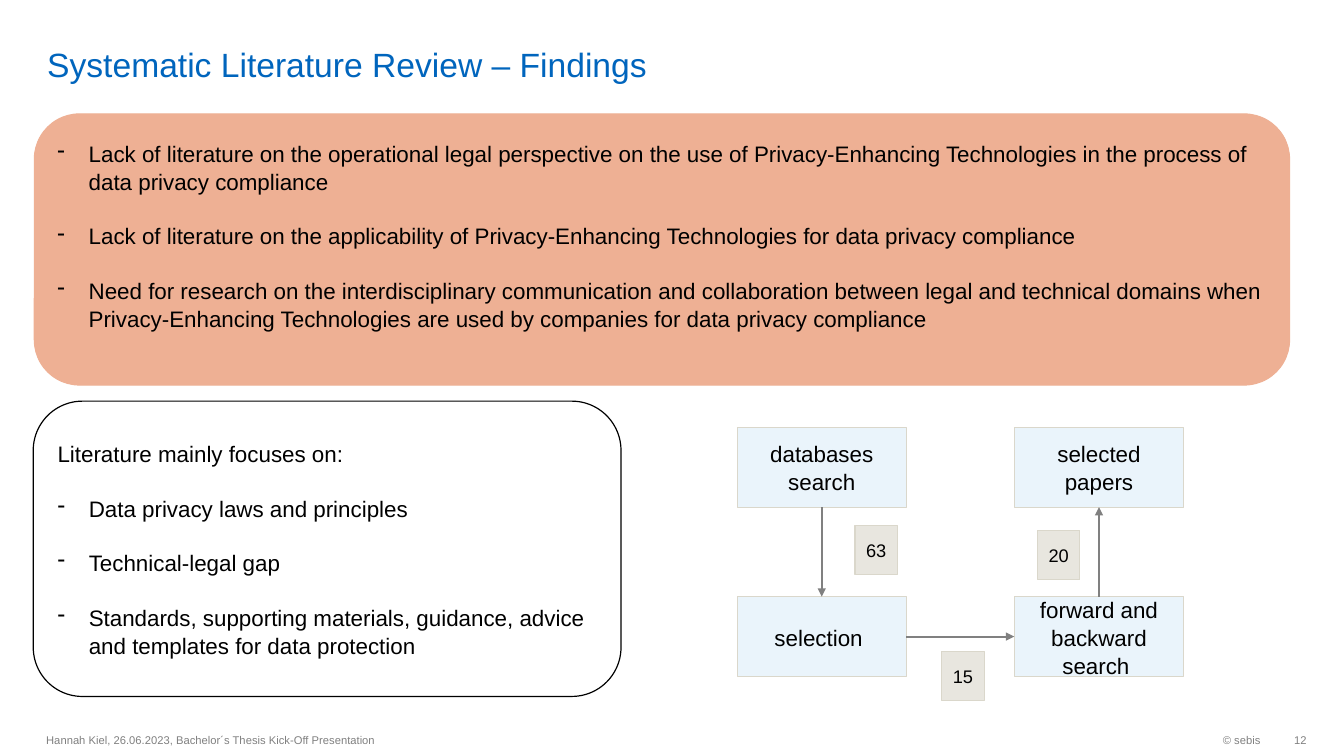
from dataclasses import dataclass

from lxml import etree
from pptx import Presentation, util as u
from pptx.dml.color import RGBColor
from pptx.enum import shapes, text
from pptx.oxml.ns import qn

PX = 9144  # 100 px to the inch
LEFT, MID, RIGHT = text.PP_ALIGN.LEFT, text.PP_ALIGN.CENTER, text.PP_ALIGN.RIGHT
KIND = shapes.MSO_SHAPE
TOP, WEST, BASE, EAST = range(4)  # connection sites of a box


@dataclass(frozen=True)
class Theme:
    face: str = "Arial"
    blue: str = "0065BD"
    gray: str = "808080"
    ink: str = "000000"
    white: str = "FFFFFF"
    peach: str = "EEB094"
    sky: str = "EAF4FB"
    sand: str = "E8E6DF"
    edge: str = "DAD7CB"
    title: int = 24
    body: int = 16
    count: int = 13
    foot: int = 8
    gap: int = 19
    lead: float = 1.04


T = Theme()


def px(*vals):
    return [u.Emu(v * PX) for v in vals]


def put(obj, **vals):
    for name, val in vals.items():
        setattr(obj, name, val)


def dash(para):
    props = para._p.get_or_add_pPr()
    props.set("marL", str(31 * PX))
    props.set("indent", str(-31 * PX))
    etree.SubElement(props, qn("a:buChar")).set("char", "-")


def write(shape, lines, size, color=T.ink, align=LEFT, lead=None, **frame):
    """Fill a shape with lines; a line that starts with '- ' gets a dash bullet."""
    body = shape.text_frame
    put(body, **{"word_wrap": True, "vertical_anchor": text.MSO_ANCHOR.MIDDLE, **frame})
    for i, line in enumerate(lines):
        para = body.add_paragraph() if i else body.paragraphs[0]
        if line.startswith("- "):
            dash(para)
        para.add_run().text = line.removeprefix("- ")
        put(para, alignment=align, line_spacing=lead)
        if i < len(lines) - 1:
            para.space_after = u.Pt(T.gap)
        put(para.font, name=T.face, size=u.Pt(size))
        para.font.color.rgb = RGBColor.from_string(color)


def label(slide, box, line, size, color, **form):
    write(slide.shapes.add_textbox(*px(*box)), [line], size, color, **form)


def block(slide, kind, box, fill, edge, width=0.75):
    shape = slide.shapes.add_shape(kind, *px(*box))
    shape.shadow.inherit = False
    shape.fill.solid()
    shape.fill.fore_color.rgb = RGBColor.from_string(fill)
    shape.line.color.rgb = RGBColor.from_string(edge)
    shape.line.width = u.Pt(width)
    return shape


def arrow(slide, start, out, end, into):
    line = slide.shapes.add_connector(shapes.MSO_CONNECTOR.STRAIGHT, 0, 0, 0, 0)
    line.begin_connect(start, out)
    line.end_connect(end, into)
    line.line.color.rgb = RGBColor.from_string(T.gray)
    line.line.width = u.Pt(1.35)
    etree.SubElement(line.line._get_or_add_ln(), qn("a:tailEnd")).set("type", "triangle")
    etree.SubElement(line._element.spPr, qn("a:effectLst"))


def panel(slide, box, lines, fill, edge, width, base=5):
    shape = block(slide, KIND.ROUNDED_RECTANGLE, box, fill, edge, width)
    write(shape, lines, T.body, lead=T.lead, margin_bottom=px(base)[0])


def flow(slide, box):
    """Four steps in the corners of the box, joined by arrows with paper counts."""
    x, y, w, h = box
    wide, high = 168, 79
    steps = {
        "databases search": (0, 0),
        "selection ": (0, 1),
        "forward and backward search ": (1, 1),
        "selected papers": (1, 0),
    }
    made = []
    for name, (col, row) in steps.items():
        place = (x + col * (w - wide), y + row * (h - high), wide, high)
        step = block(slide, KIND.FLOWCHART_PROCESS, place, T.sky, T.edge)
        write(step, [name], T.body, align=MID, lead=T.lead)
        made.append(step)

    sites = [(BASE, TOP), (EAST, WEST), (TOP, BASE)]
    for start, end, (out, into) in zip(made, made[1:], sites):
        arrow(slide, start, out, end, into)

    for num, dx, dy in [("63", 117, 97), ("15", 203, 222), ("20", 298, 102)]:
        place = (x + dx, y + dy, 42, 49)
        tag = block(slide, KIND.FLOWCHART_PROCESS, place, T.sand, T.edge)
        write(tag, [num], T.count, align=MID)


def footer(slide, box):
    x, y, w, h = box
    note = "Hannah Kiel, 26.06.2023, Bachelor´s Thesis Kick-Off Presentation"
    label(slide, (x, y, 630, h), note, T.foot, T.gray)
    label(slide, (x + w - 270, y, 234, h), "© sebis", T.foot, T.gray, align=RIGHT)
    label(slide, (x + w - 36, y, 36, h), "12", T.foot, T.gray, align=RIGHT, margin_right=0)


def findings(slide):
    # Title
    label(slide, (37, 5, 1158, 79), "Systematic Literature Review – Findings",
          T.title, T.blue, vertical_anchor=text.MSO_ANCHOR.BOTTOM,
          margin_top=0, margin_bottom=0)

    # Research gaps
    panel(slide, (34, 113, 1245, 269), [
        "- Lack of literature on the operational legal perspective on the use of "
        "Privacy-Enhancing Technologies in the process of data privacy compliance",
        "- Lack of literature on the applicability of Privacy-Enhancing Technologies "
        "for data privacy compliance",
        "- Need for research on the interdisciplinary communication and collaboration "
        "between legal and technical domains when Privacy-Enhancing Technologies are "
        "used by companies for data privacy compliance",
    ], T.peach, T.peach, 0.75, base=33)

    # Focus of the literature
    panel(slide, (33, 398, 583, 293), [
        "Literature mainly focuses on:",
        "- Data privacy laws and principles",
        "- Technical-legal gap",
        "- Standards, supporting materials, guidance, advice and templates "
        "for data protection",
    ], T.white, T.ink, 0.85)

    # Search process
    flow(slide, (731, 424, 443, 247))

    footer(slide, (36, 718, 1260, 32))


def main():
    deck = Presentation()
    deck.slide_width, deck.slide_height = px(1333, 750)
    findings(deck.slides.add_slide(deck.slide_layouts[6]))
    deck.save("out.pptx")


if __name__ == "__main__":
    main()
